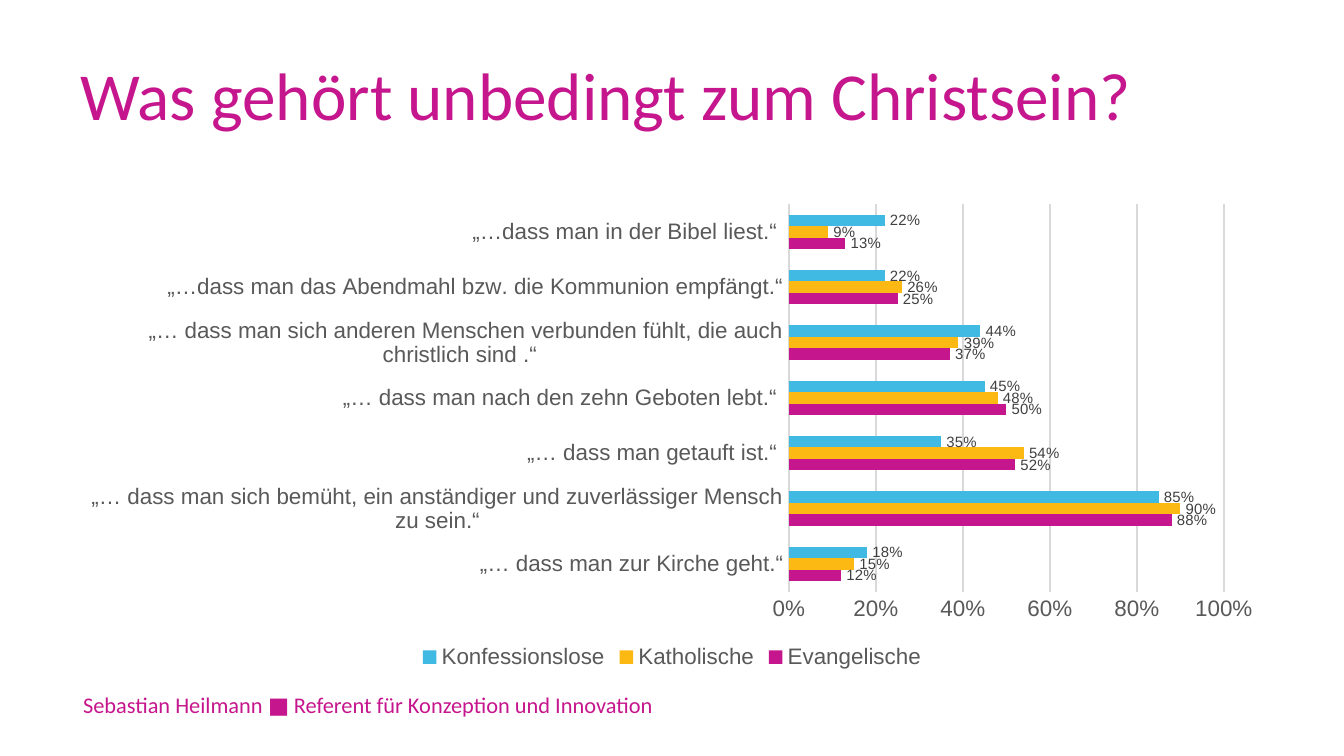
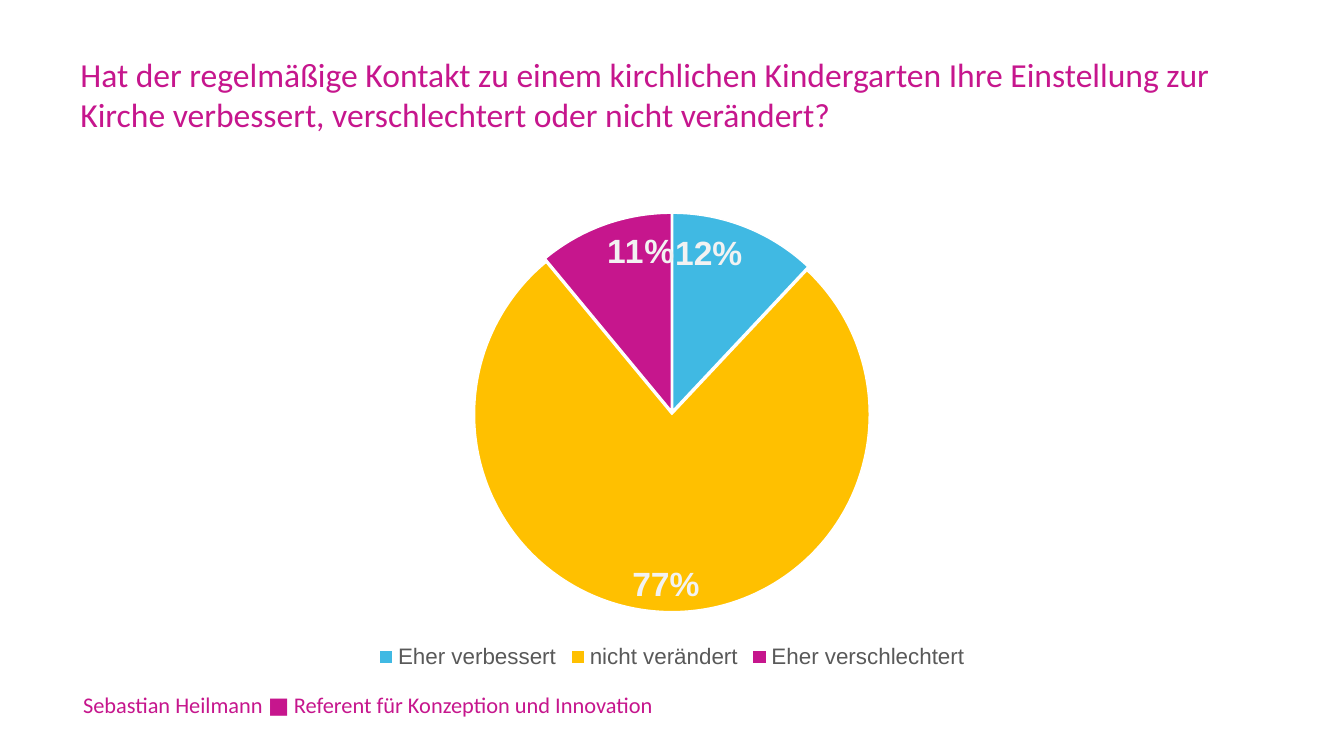
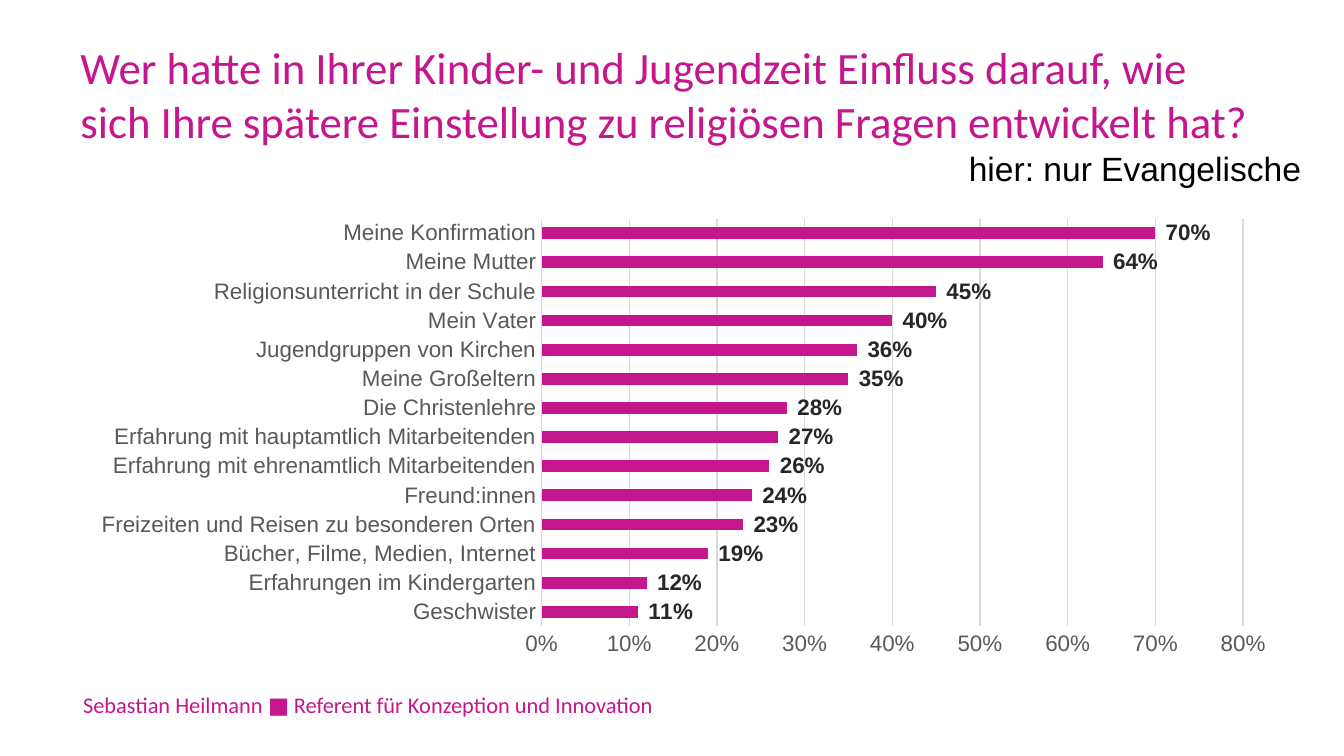
from dataclasses import dataclass

from lxml import etree
from pptx import Presentation
from pptx import util as u
from pptx.chart.data import CategoryChartData
from pptx.dml.color import RGBColor
from pptx.enum import chart as charts, text
from pptx.oxml.ns import qn


@dataclass(frozen=True)
class Theme:
    magenta: str = "C6168D"
    yellow: str = "FDB913"
    amber: str = "FFC000"
    blue: str = "40B9E3"
    axis_text: str = "595959"
    small_label: str = "404040"
    bold_label: str = "262626"
    pie_label: str = "F2F2F2"
    grid: str = "D9D9D9"
    white: str = "FFFFFF"
    black: str = "000000"
    heading_font: str = "Calibri"
    body_font: str = "Arial"
    title_size: int = 36
    long_title_size: int = 24
    small_title_size: int = 18
    note_size: int = 18
    body_size: int = 12
    chart_size: int = 10
    label_size: int = 8
    pie_label_size: int = 18


THEME = Theme()
FOOTER = "Sebastian Heilmann ■ Referent für Konzeption und Innovation"
TITLE_BOX = (1.27, 0.58, 22.86, 2.39)
FOOTER_BOX = (1.32, 12.9, 12.98, 0.84)
CHART_BOX = (1.27, 3.68, 22.86, 9.07)
NOTE_BOX = (18.06, 2.67, 8, 1.02)
PERCENT = "0%"

CHRISTIAN_LIFE = [
    "„… dass man zur Kirche geht.“",
    "„… dass man sich bemüht, ein anständiger und zuverlässiger Mensch zu sein.“",
    " „… dass man getauft ist.“ ",
    "„… dass man nach den zehn Geboten lebt.“ ",
    " „… dass man sich anderen Menschen verbunden fühlt, die auch christlich sind .“ ",
    "„…dass man das Abendmahl bzw. die Kommunion empfängt.“",
    " „…dass man in der Bibel liest.“ ",
]
ANSWERS_BY_GROUP = {
    "Evangelische": [0.12, 0.88, 0.52, 0.5, 0.37, 0.25, 0.13],
    "Katholische": [0.15, 0.9, 0.54, 0.48, 0.39, 0.26, 0.09],
    "Konfessionslose": [0.18, 0.85, 0.35, 0.45, 0.44, 0.22, 0.22],
}
KINDERGARTEN = {
    "Eher verbessert": 0.12,
    "nicht verändert": 0.77,
    "Eher verschlechtert": 0.11,
}
INFLUENCES = {
    "Geschwister": 0.11,
    "Erfahrungen im Kindergarten": 0.12,
    "Bücher, Filme, Medien, Internet": 0.19,
    "Freizeiten und Reisen zu besonderen Orten": 0.23,
    "Freund:innen": 0.24,
    "Erfahrung mit ehrenamtlich Mitarbeitenden": 0.26,
    "Erfahrung mit hauptamtlich Mitarbeitenden": 0.27,
    "Die Christenlehre": 0.28,
    "Meine Großeltern": 0.35,
    "Jugendgruppen von Kirchen": 0.36,
    "Mein Vater": 0.4,
    "Religionsunterricht in der Schule": 0.45,
    "Meine Mutter": 0.64,
    "Meine Konfirmation": 0.7,
}


def in_cm(box):
    return [u.Cm(length) for length in box]


def style_font(font, size, color, name=THEME.body_font, bold=False):
    font.name = name
    font.size = u.Pt(size)
    font.bold = bold
    font.color.rgb = RGBColor.from_string(color)


def style_fill(formatted, color):
    formatted.fill.solid()
    formatted.fill.fore_color.rgb = RGBColor.from_string(color)


def style_line(formatted, color):
    formatted.line.color.rgb = RGBColor.from_string(color)
    formatted.line.width = u.Pt(0.75)


def add_text(slide, content, box, anchor=text.MSO_ANCHOR.MIDDLE, **font_format):
    frame = slide.shapes.add_textbox(*in_cm(box)).text_frame
    frame.word_wrap = True
    frame.vertical_anchor = anchor
    paragraph = frame.paragraphs[0]
    paragraph.text = content
    for run in paragraph.runs:
        style_font(run.font, **font_format)


def add_page(presentation, title, title_size):
    """Add a slide with the shared title and footer."""
    slide = presentation.slides.add_slide(presentation.slide_layouts[6])
    heading = {"color": THEME.magenta, "name": THEME.heading_font}
    add_text(slide, FOOTER, FOOTER_BOX, size=THEME.body_size, **heading)
    add_text(slide, title, TITLE_BOX, size=title_size, **heading)
    return slide


def add_chart(slide, kind, categories, series, box=CHART_BOX):
    data = CategoryChartData(number_format=PERCENT)
    data.categories = categories
    for name, values in series.items():
        data.add_series(name, values)
    chart = slide.shapes.add_chart(kind, *in_cm(box), data).chart
    chart.has_title = False
    chart.has_legend = False
    style_font(chart.font, THEME.chart_size, THEME.black)
    return chart


def add_legend(chart):
    chart.has_legend = True
    chart.legend.position = charts.XL_LEGEND_POSITION.BOTTOM
    chart.legend.include_in_layout = False
    style_font(chart.legend.font, THEME.body_size, THEME.axis_text)


def style_axes(chart, maximum, step):
    for axis in (chart.category_axis, chart.value_axis):
        axis.major_tick_mark = charts.XL_TICK_MARK.NONE
        axis.minor_tick_mark = charts.XL_TICK_MARK.NONE
        style_font(axis.tick_labels.font, THEME.body_size, THEME.axis_text)
    style_line(chart.category_axis.format, THEME.grid)
    values = chart.value_axis
    values.minimum_scale = 0
    values.maximum_scale = maximum
    values.major_unit = step
    values.format.line.fill.background()
    values.has_major_gridlines = True
    style_line(values.major_gridlines.format, THEME.grid)
    values.tick_labels.number_format = PERCENT
    values.tick_labels.number_format_is_linked = False


def style_bars(chart, colors, gap, overlap):
    plot = chart.plots[0]
    plot.vary_by_categories = False
    plot.gap_width = gap
    plot.overlap = overlap
    for series, color in zip(plot.series, colors):
        style_fill(series.format, color)


def show_values(series, position, **font_format):
    labels = series.data_labels
    labels.show_value = True
    labels.position = position
    labels.number_format = PERCENT
    labels.number_format_is_linked = False
    style_font(labels.font, **font_format)


def manual_layout(**settings):
    layout = etree.Element(qn("c:layout"))
    manual = etree.SubElement(layout, qn("c:manualLayout"))
    for name, value in settings.items():
        etree.SubElement(manual, qn(f"c:{name}")).set("val", str(value))
    return layout


def place_plot(chart, x, y, w, h):
    plot_area = chart.element.find(f".//{qn('c:plotArea')}")
    for layout in plot_area.findall(qn("c:layout")):
        plot_area.remove(layout)
    plot_area.insert(0, manual_layout(
        layoutTarget="inner", xMode="edge", yMode="edge", x=x, y=y, w=w, h=h))


def move_labels_past_bars(chart, shift, **font_format):
    """Stacked bars have no outside labels, so shift each one to the right."""
    series = chart.plots[0].series[0]
    for index, _ in enumerate(series.values):
        label = series.points[index].data_label
        label.position = charts.XL_LABEL_POSITION.INSIDE_END
        style_font(label.font, **font_format)
    for label_element in chart.element.iter(qn("c:dLbl")):
        label_element.find(qn("c:idx")).addnext(manual_layout(x=shift, y=0))


def style_pie(chart, colors):
    series = chart.plots[0].series[0]
    style_line(series.format, THEME.white)
    explosion = etree.Element(qn("c:explosion"))
    explosion.set("val", "1")
    chart.element.find(f".//{qn('c:ser')}/{qn('c:spPr')}").addnext(explosion)
    for index, color in enumerate(colors):
        point = series.points[index]
        style_fill(point.format, color)
        style_line(point.format, THEME.white)


def add_christian_life(presentation):
    slide = add_page(presentation, "Was gehört unbedingt zum Christsein?", THEME.title_size)
    chart = add_chart(slide, charts.XL_CHART_TYPE.BAR_CLUSTERED, CHRISTIAN_LIFE, ANSWERS_BY_GROUP)
    style_axes(chart, maximum=1, step=0.2)
    style_bars(chart, [THEME.magenta, THEME.yellow, THEME.blue], gap=182, overlap=0)
    for series in chart.plots[0].series:
        show_values(series, charts.XL_LABEL_POSITION.OUTSIDE_END,
                    size=THEME.label_size, color=THEME.small_label)
    add_legend(chart)


def add_kindergarten(presentation):
    slide = add_page(
        presentation,
        "Hat der regelmäßige Kontakt zu einem kirchlichen Kindergarten Ihre Einstellung zur\n"
        "Kirche verbessert, verschlechtert oder nicht verändert?".replace("\n", "\v"),
        THEME.small_title_size)
    chart = add_chart(slide, charts.XL_CHART_TYPE.PIE, KINDERGARTEN.keys(),
                      {"Series 1": KINDERGARTEN.values()})
    style_pie(chart, [THEME.blue, THEME.amber, THEME.magenta])
    show_values(chart.plots[0].series[0], charts.XL_LABEL_POSITION.INSIDE_END,
                size=THEME.pie_label_size, color=THEME.pie_label, bold=True)
    add_legend(chart)


def add_influences(presentation):
    slide = add_page(
        presentation,
        "Wer hatte in Ihrer Kinder- und Jugendzeit Einfluss darauf, wie "
        "sich Ihre spätere Einstellung zu religiösen Fragen entwickelt hat?",
        THEME.long_title_size)
    left, *rest = CHART_BOX
    chart = add_chart(slide, charts.XL_CHART_TYPE.BAR_STACKED, INFLUENCES.keys(),
                      {"Series 1": INFLUENCES.values()}, box=(left + 0.05, *rest))
    style_axes(chart, maximum=0.8, step=0.1)
    style_bars(chart, [THEME.magenta], gap=150, overlap=100)
    place_plot(chart, x=0.39, y=0.05, w=0.58, h=0.85)
    label_format = {"size": THEME.body_size, "color": THEME.bold_label, "bold": True}
    show_values(chart.plots[0].series[0], charts.XL_LABEL_POSITION.INSIDE_END, **label_format)
    move_labels_past_bars(chart, shift=0.05, **label_format)
    add_text(slide, "hier: nur Evangelische", NOTE_BOX, anchor=text.MSO_ANCHOR.TOP,
             size=THEME.note_size, color=THEME.black)


def main():
    presentation = Presentation()
    presentation.slide_width = u.Cm(25.4)
    presentation.slide_height = u.Cm(14.29)
    add_christian_life(presentation)
    add_kindergarten(presentation)
    add_influences(presentation)
    presentation.save("out.pptx")


if __name__ == "__main__":
    main()
